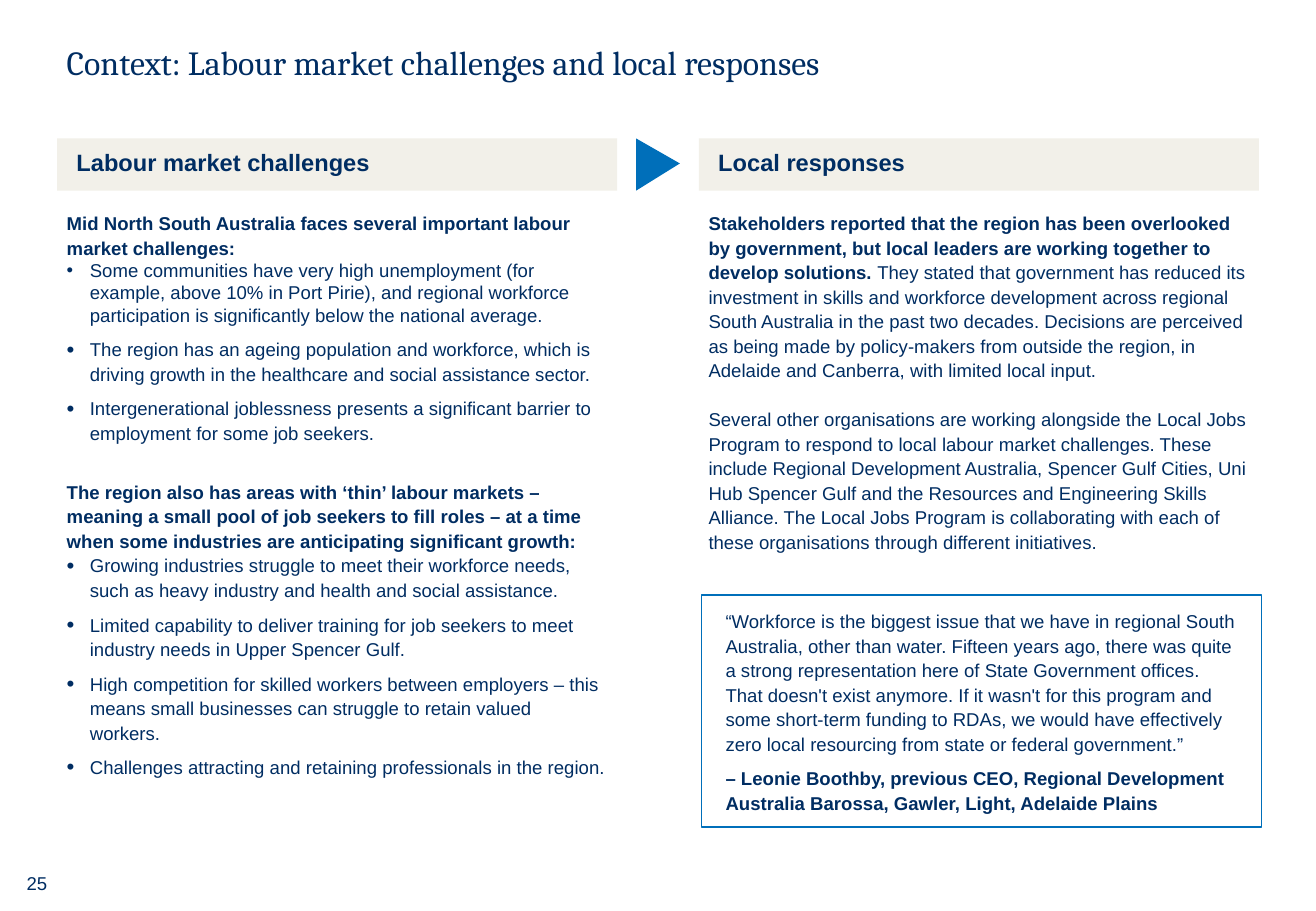
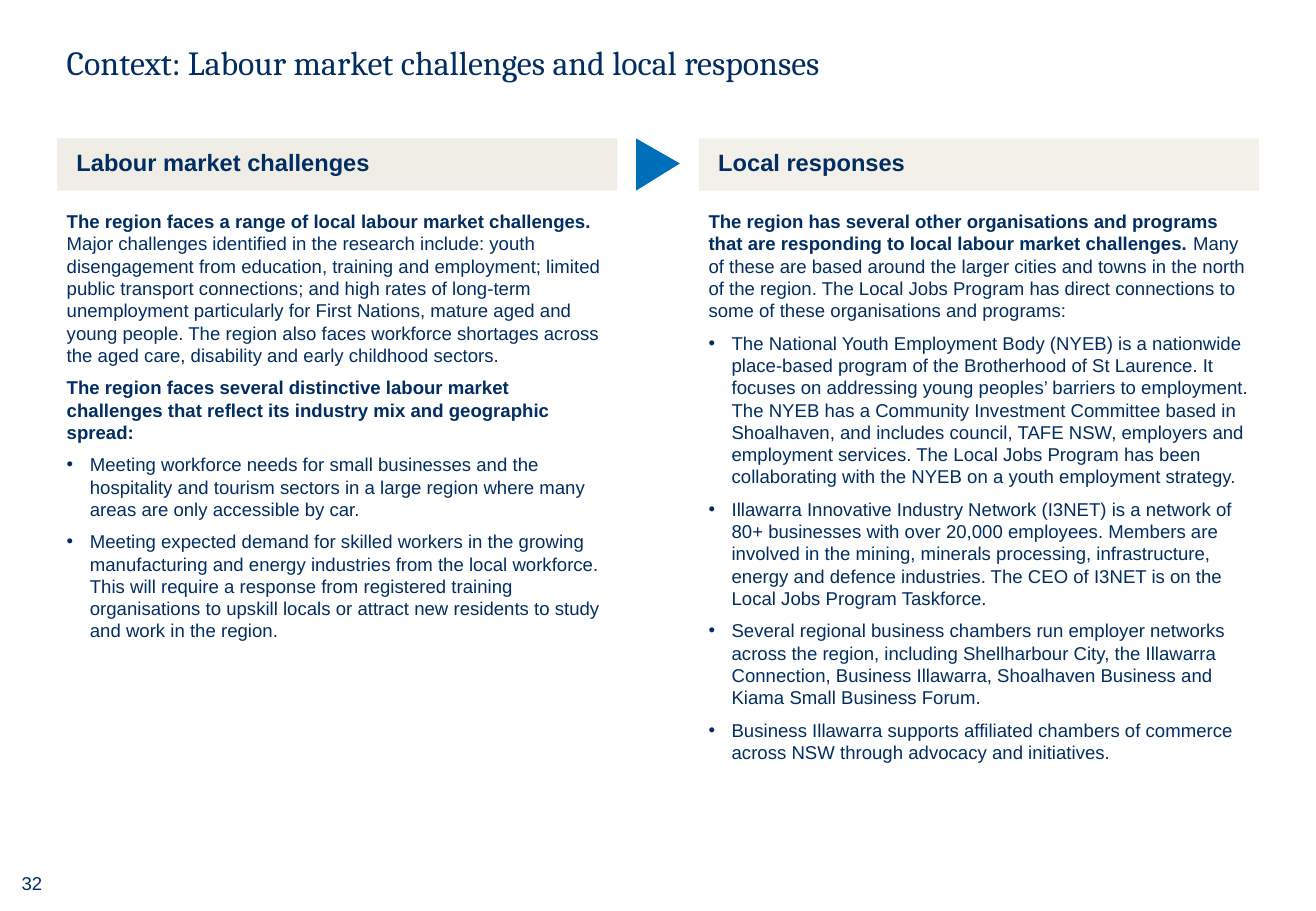
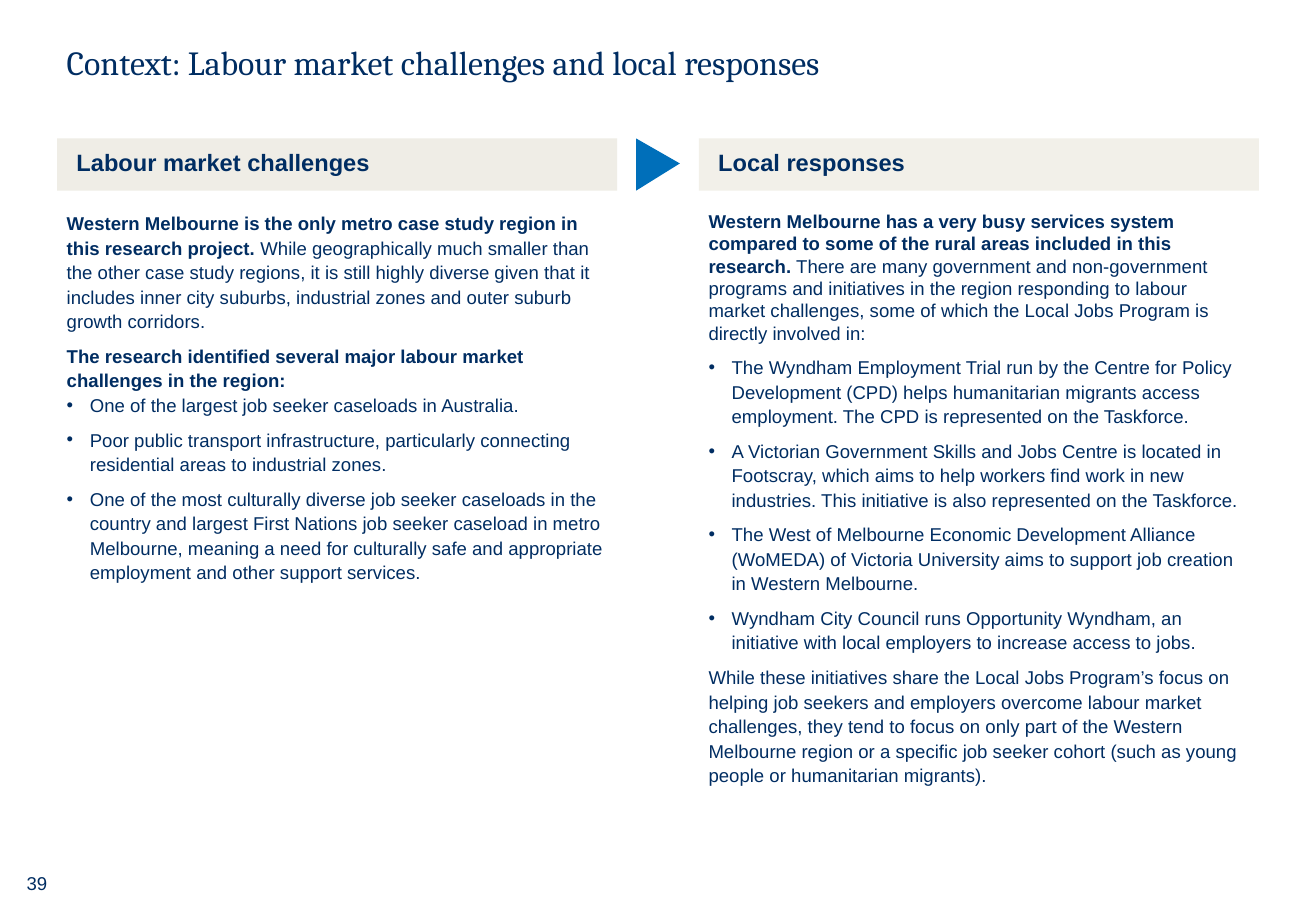
import dataclasses

import lxml.etree
import pptx
import pptx.dml.color
import pptx.enum.shapes
import pptx.enum.text
import pptx.oxml.ns
import pptx.util

COLOURS = {"navy": "002D62", "blue": "006FBA", "sand": "F2F0E9", "stone": "EFEDE6", "white": "FFFFFF"}
WIDTH, HEIGHT = 10.83, 7.5
COLUMNS, ROWS = 60, 40
MARGIN, PANEL = 2.6, 25.54
LEFT, RIGHT = MARGIN, COLUMNS - MARGIN - PANEL
BAND_TOP, BAND_HEIGHT, BODY_TOP = 6.08, 2.29, 8.8
ANCHOR = pptx.enum.text.MSO_ANCHOR
ALIGN = pptx.enum.text.PP_ALIGN
SHAPE = pptx.enum.shapes.MSO_SHAPE


@dataclasses.dataclass
class Entry:
    """One paragraph: a bold lead, plain text, and its spacing in points."""
    bold: str = ""
    plain: str = ""
    bullet: int = 0
    leading: float = 1.1
    after: float = 6


def bullets(texts, size=100, leading=1.1):
    """Return a bulleted entry for each text."""
    return [Entry(plain=text, bullet=size, leading=leading) for text in texts]


class Report:
    """Holds the house style and the slide being drawn."""

    def __init__(self):
        """Open an empty deck of the right size."""
        self.deck = pptx.Presentation()
        self.deck.slide_width = pptx.util.Inches(WIDTH)
        self.deck.slide_height = pptx.util.Inches(HEIGHT)
        self.page = None

    def add_page(self):
        """Start a blank slide."""
        self.page = self.deck.slides.add_slide(self.deck.slide_layouts[6])

    def colour(self, name):
        """Return a named colour."""
        return pptx.dml.color.RGBColor.from_string(COLOURS[name])

    def place(self, column, row, columns, rows):
        """Turn grid units into lengths."""
        across, down = WIDTH / COLUMNS, HEIGHT / ROWS
        return [pptx.util.Inches(size) for size in (column * across, row * down, columns * across, rows * down)]

    def shape(self, kind, area, fill, line=None):
        """Draw a flat shape, outlined if a line colour is given."""
        box = self.page.shapes.add_shape(kind, *self.place(*area))
        box.shadow.inherit = False
        box.fill.solid()
        box.fill.fore_color.rgb = self.colour(fill)
        if line:
            box.line.color.rgb = self.colour(line)
            box.line.width = pptx.util.Pt(0.75)
        else:
            box.line.fill.background()
        return box

    def frame(self, box, insets, anchor=ANCHOR.TOP):
        """Set wrapping, insets and anchor of a box."""
        frame = box.text_frame
        frame.word_wrap = True
        frame.vertical_anchor = anchor
        frame.margin_left, frame.margin_top, frame.margin_right, frame.margin_bottom = map(pptx.util.Inches, insets)
        return frame

    def style(self, span, size=11, bold=False, name="Arial"):
        """Give a run the house font."""
        span.font.name, span.font.size, span.font.bold = name, pptx.util.Pt(size), bold
        span.font.color.rgb = self.colour("navy")

    def line(self, frame, text, align=ALIGN.LEFT, **font):
        """Fill a frame with one styled line."""
        para = frame.paragraphs[0]
        para.text = text
        para.alignment = align
        self.style(para.runs[0], **font)

    def bullet(self, para, size):
        """Give a paragraph a hanging bullet sized in percent."""
        qn = pptx.oxml.ns.qn
        settings = para._p.get_or_add_pPr()
        indent = pptx.util.Inches(0.19)
        settings.set("marL", str(indent))
        settings.set("indent", str(-indent))
        tint = lxml.etree.SubElement(settings, qn("a:buClr"))
        lxml.etree.SubElement(tint, qn("a:srgbClr"), val=COLOURS["navy"])
        lxml.etree.SubElement(settings, qn("a:buSzPct"), val=str(size * 1000))
        lxml.etree.SubElement(settings, qn("a:buFont"), typeface="Arial")
        lxml.etree.SubElement(settings, qn("a:buChar"), char="•")

    def entries(self, frame, entries):
        """Write the paragraphs of a frame."""
        for index, entry in enumerate(entries):
            para = frame.add_paragraph() if index else frame.paragraphs[0]
            if entry.bullet:
                self.bullet(para, entry.bullet)
            para.alignment = ALIGN.LEFT
            para.line_spacing = entry.leading
            para.space_after = pptx.util.Pt(entry.after)
            for text, bold in ((entry.bold, True), (entry.plain, False)):
                if text:
                    span = para.add_run()
                    span.text = text
                    self.style(span, bold=bold)

    def text_box(self, area, insets=(0.08,) * 4, anchor=ANCHOR.TOP):
        """Add a text box and return its frame."""
        return self.frame(self.page.shapes.add_textbox(*self.place(*area)), insets, anchor)

    def title(self, text):
        """Write the slide title."""
        frame = self.text_box((MARGIN, 0.96, COLUMNS - 2 * MARGIN, 3.57), anchor=ANCHOR.MIDDLE)
        self.line(frame, text, size=20, name="Cambria")

    def panel(self, column, heading, fill, rows, entries):
        """Draw a heading band with its text below."""
        band = self.shape(SHAPE.RECTANGLE, (column, BAND_TOP, PANEL, BAND_HEIGHT), fill)
        self.line(self.frame(band, (0.16, 0.08, 0.16, 0.08)), heading, size=14, bold=True)
        self.entries(self.text_box((column, BODY_TOP, PANEL, rows)), entries)

    def pointer(self):
        """Draw the triangle between the two bands."""
        base, depth = 2.38, 1.92
        area = ((COLUMNS - base) / 2, BAND_TOP + (BAND_HEIGHT - depth) / 2, base, depth)
        triangle = self.shape(SHAPE.ISOSCELES_TRIANGLE, area, "blue")
        triangle.adjustments[0] = 0.48
        triangle.rotation = 90

    def quote(self, entries):
        """Draw the outlined quotation."""
        box = self.shape(SHAPE.RECTANGLE, (RIGHT + 0.11, 26.13, PANEL, 10.19), "white", "blue")
        self.entries(self.frame(box, (0.2, 0.24, 0.2, 0.24), ANCHOR.MIDDLE), entries)

    def number(self, text, inset):
        """Write the page number."""
        self.line(self.text_box((0.44, 38.29, 1.99, 1.12), (0, 0, inset, 0)), text, ALIGN.RIGHT)


PAGES = [
    {
        "number": ("25", 0.05),
        "fill": "sand",
        "rows": (25.6, 16.64),
        "challenges": [
            Entry("Mid North South Australia faces several important labour market challenges:", after=0),
            *bullets([
                "Some communities have very high unemployment (for example, above 10% in Port Pirie), and regional "
                "workforce participation is significantly below the national average.",
            ], leading=1.0),
            *bullets([
                "The region has an ageing population and workforce, which is driving growth in the healthcare and "
                "social assistance sector.",
            ], size=120),
            Entry(plain="Intergenerational joblessness presents a significant barrier to employment for some job "
                  "seekers.", bullet=120, after=20.5),
            Entry("The region also has areas with ‘thin’ labour markets – meaning a small pool of job seekers to "
                  "fill roles – at a time when some industries are anticipating significant growth:", after=0),
            *bullets([
                "Growing industries struggle to meet their workforce needs, such as heavy industry and health and "
                "social assistance.",
                "Limited capability to deliver training for job seekers to meet industry needs in Upper Spencer "
                "Gulf.",
                "High competition for skilled workers between employers – this means small businesses can struggle "
                "to retain valued workers.",
                "Challenges attracting and retaining professionals in the region.",
            ], size=120),
        ],
        "responses": [
            Entry("Stakeholders reported that the region has been overlooked by government, but local leaders are "
                  "working together to develop solutions. ",
                  "They stated that government has reduced its investment in skills and workforce development "
                  "across regional South Australia in the past two decades. Decisions are perceived as being made "
                  "by policy-makers from outside the region, in Adelaide and Canberra, with limited local input.",
                  after=14.5),
            Entry(plain="Several other organisations are working alongside the Local Jobs Program to respond to "
                  "local labour market challenges. These include Regional Development Australia, Spencer Gulf "
                  "Cities, Uni Hub Spencer Gulf and the Resources and Engineering Skills Alliance. The Local Jobs "
                  "Program is collaborating with each of these organisations through different initiatives."),
        ],
        "quote": [
            Entry(plain="“Workforce is the biggest issue that we have in regional South Australia, other than "
                  "water. Fifteen years ago, there was quite a strong representation here of State Government "
                  "offices. That doesn't exist anymore. If it wasn't for this program and some short-term funding "
                  "to RDAs, we would have effectively zero local resourcing from state or federal government.”"),
            Entry("– Leonie Boothby, previous CEO, Regional Development Australia Barossa, Gawler, Light, "
                  "Adelaide Plains", after=0),
        ],
    },
    {
        "number": ("32", 0.09),
        "fill": "stone",
        "rows": (24.85, 27.04),
        "challenges": [
            Entry("The region faces a range of local labour market challenges.",
                  " Major challenges identified in the research include: youth disengagement from education, "
                  "training and employment; limited public transport connections; and high rates of long-term "
                  "unemployment particularly for First Nations, mature aged and young people. The region also "
                  "faces workforce shortages across the aged care, disability and early childhood sectors.",
                  leading=1.0),
            Entry("The region faces several distinctive labour market challenges that reflect its industry mix "
                  "and geographic spread:", leading=1.0),
            *bullets([
                "Meeting workforce needs for small businesses and the hospitality and tourism sectors in a large "
                "region where many areas are only accessible by car.",
                "Meeting expected demand for skilled workers in the growing manufacturing and energy industries "
                "from the local workforce. This will require a response from registered training organisations to "
                "upskill locals or attract new residents to study and work in the region.",
            ], leading=1.0),
        ],
        "responses": [
            Entry("The region has several other organisations and programs that are responding to local labour "
                  "market challenges.",
                  " Many of these are based around the larger cities and towns in the north of the region. The "
                  "Local Jobs Program has direct connections to some of these organisations and programs:",
                  leading=1.0),
            *bullets([
                "The National Youth Employment Body (NYEB) is a nationwide place-based program of the Brotherhood "
                "of St Laurence. It focuses on addressing young peoples’ barriers to employment. The NYEB has a "
                "Community Investment Committee based in Shoalhaven, and includes council, TAFE NSW, employers and "
                "employment services. The Local Jobs Program has been collaborating with the NYEB on a youth "
                "employment strategy.",
                "Illawarra Innovative Industry Network (I3NET) is a network of 80+ businesses with over 20,000 "
                "employees. Members are involved in the mining, minerals processing, infrastructure, energy and "
                "defence industries. The CEO of I3NET is on the Local Jobs Program Taskforce.",
                "Several regional business chambers run employer networks across the region, including "
                "Shellharbour City, the Illawarra Connection, Business Illawarra, Shoalhaven Business and Kiama "
                "Small Business Forum.",
                "Business Illawarra supports affiliated chambers of commerce across NSW through advocacy and "
                "initiatives.",
            ], leading=1.0),
        ],
    },
    {
        "number": ("39", 0.05),
        "fill": "stone",
        "rows": (16.43, 21.92),
        "challenges": [
            Entry("Western Melbourne is the only metro case study region in this research project.",
                  " While geographically much smaller than the other case study regions, it is still highly "
                  "diverse given that it includes inner city suburbs, industrial zones and outer suburb growth "
                  "corridors."),
            Entry("The research identified several major labour market challenges in the region:", after=0),
            *bullets([
                "One of the largest job seeker caseloads in Australia.",
                "Poor public transport infrastructure, particularly connecting residential areas to industrial "
                "zones.",
                "One of the most culturally diverse job seeker caseloads in the country and largest First Nations "
                "job seeker caseload in metro Melbourne, meaning a need for culturally safe and appropriate "
                "employment and other support services.",
            ]),
        ],
        "responses": [
            Entry("Western Melbourne has a very busy services system compared to some of the rural areas included "
                  "in this research.",
                  " There are many government and non-government programs and initiatives in the region "
                  "responding to labour market challenges, some of which the Local Jobs Program is directly "
                  "involved in:", leading=1.0),
            *bullets([
                "The Wyndham Employment Trial run by the Centre for Policy Development (CPD) helps humanitarian "
                "migrants access employment. The CPD is represented on the Taskforce.",
                "A Victorian Government Skills and Jobs Centre is located in Footscray, which aims to help workers "
                "find work in new industries. This initiative is also represented on the Taskforce.",
                "The West of Melbourne Economic Development Alliance (WoMEDA) of Victoria University aims to "
                "support job creation in Western Melbourne.",
                "Wyndham City Council runs Opportunity Wyndham, an initiative with local employers to increase "
                "access to jobs.",
            ]),
            Entry(plain="While these initiatives share the Local Jobs Program’s focus on helping job seekers and "
                  "employers overcome labour market challenges, they tend to focus on only part of the Western "
                  "Melbourne region or a specific job seeker cohort (such as young people or humanitarian "
                  "migrants)."),
        ],
    },
]


def main():
    """Build and save the deck."""
    report = Report()
    for content in PAGES:
        report.add_page()
        report.title("Context: Labour market challenges and local responses")
        left_rows, right_rows = content["rows"]
        report.panel(LEFT, "Labour market challenges", content["fill"], left_rows, content["challenges"])
        report.pointer()
        report.panel(RIGHT, "Local responses", "sand", right_rows, content["responses"])
        if "quote" in content:
            report.quote(content["quote"])
        report.number(*content["number"])
    report.deck.save("out.pptx")


if __name__ == "__main__":
    main()
